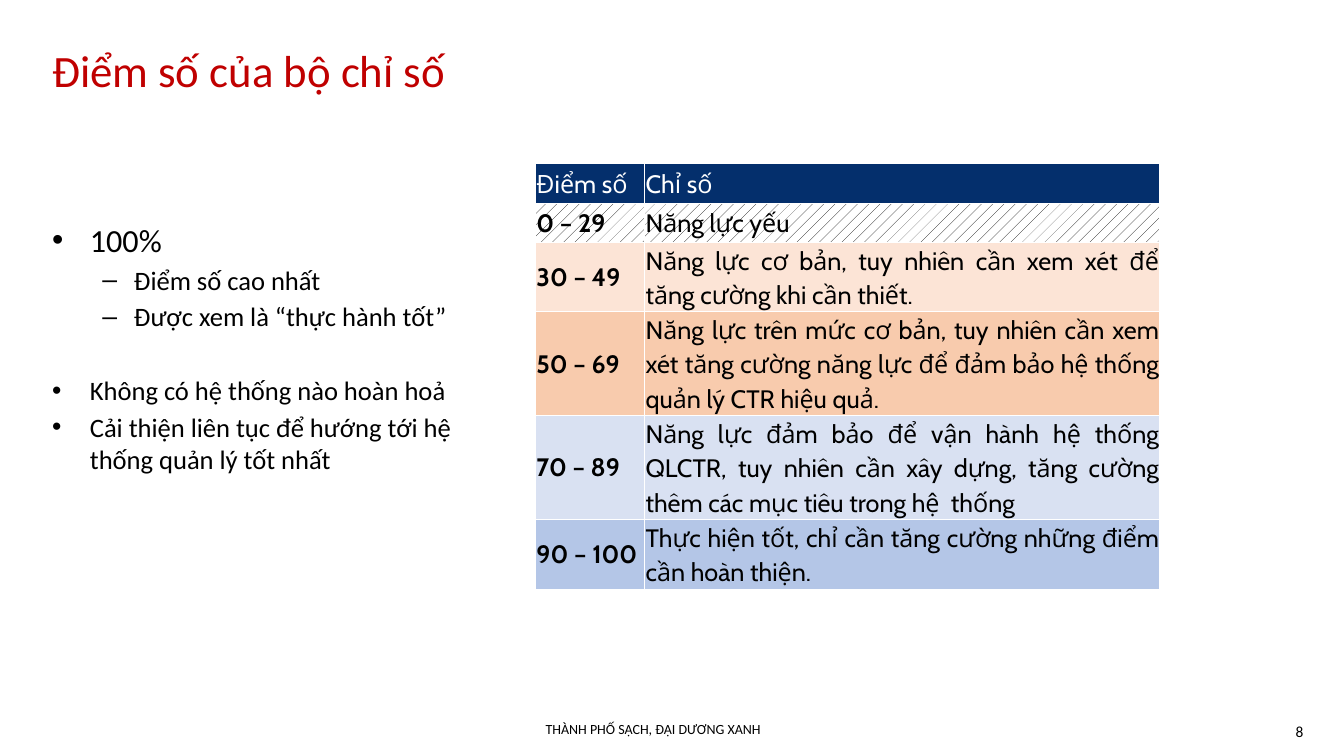
"""Build the slide on index scores: title, bullet list, score table and footer."""
from itertools import groupby

from lxml import etree
from pptx import Presentation
from pptx.dml.color import RGBColor
from pptx.enum import dml, text
from pptx.oxml import ns
from pptx.util import Pt

C = {"black": "000000", "white": "FFFFFF", "red": "C00000", "navy": "042F6C",
     "peach": "FCE4D6", "orange": "F8CBAD", "pale": "D9E1F2", "blue": "B4C6E7"}
AL, ANC = text.PP_ALIGN, text.MSO_ANCHOR

BULLETS = [
    ("100%", 0, 23, 0),
    ("Điểm số cao nhất", 1, 19, 3.5),
    ("Được xem là “thực hành tốt”", 1, 19, 3.5),
    ("Không có hệ thống nào hoàn hoả", 0, 19, 30),
    ("Cải thiện liên tục để hướng tới hệ thống quản lý tốt nhất", 0, 19, 3.5),
]
LEVELS = [{"char": "•", "left": 27, "hang": 27},
          {"char": "–", "left": 58.5, "hang": 22.5}]
SCORES = [
    ("Điểm số", "Chỉ số", "navy", 28),
    ("0 – 29", "Năng lực yếu", None, 28),
    ("30 – 49", "Năng lực cơ bản, tuy nhiên cần xem xét để tăng cường khi "
     "cần thiết.", "peach", 41),
    ("50 – 69", "Năng lực trên mức cơ bản, tuy nhiên cần xem xét tăng cường "
     "năng lực để đảm bảo hệ thống quản lý CTR hiệu quả.", "orange", 62),
    ("70 – 89", "Năng lực đảm bảo để vận hành hệ thống QLCTR, tuy nhiên cần "
     "xây dựng, tăng cường thêm các mục tiêu trong hệ  thống", "pale", 62),
    ("90 – 100", "Thực hiện tốt, chỉ cần tăng cường những điểm cần hoàn "
     "thiện.", "blue", 41),
]


def rgb(name):
    return RGBColor.from_string(C[name])


def apply(obj, fmt):
    for key, value in fmt.items():
        setattr(obj, key, value)


def place(sp, x, y, w, h):
    apply(sp, {"left": Pt(x), "top": Pt(y), "width": Pt(w), "height": Pt(h)})


def add_run(p, words, size, color="black", name="Calibri", bold=False):
    r = p.add_run()
    r.text = words
    apply(r.font, {"size": Pt(size), "name": name, "bold": bold})
    r.font.color.rgb = rgb(color)


def add_title(s, words):
    sp = s.shapes.title
    place(sp, 30, 13.5, 650, 73)
    apply(sp.text_frame, {"vertical_anchor": ANC.MIDDLE, "word_wrap": True,
                          "auto_size": text.MSO_AUTO_SIZE.NONE})
    p = sp.text_frame.paragraphs[0]
    p.alignment = AL.LEFT
    add_run(p, words, 32, "red")


def set_bullet(p, char, left, hang):
    pPr = p._p.get_or_add_pPr()
    pPr.set("marL", str(Pt(left)))
    pPr.set("indent", str(-Pt(hang)))
    etree.SubElement(pPr, ns.qn("a:buFont")).set("typeface", "Arial")
    etree.SubElement(pPr, ns.qn("a:buChar")).set("char", char)


def add_list(s, items):
    sp = s.placeholders[1]
    place(sp, 30, 153.5, 302, 314)
    tf = sp.text_frame
    apply(tf, {"vertical_anchor": ANC.TOP, "word_wrap": True,
               "auto_size": text.MSO_AUTO_SIZE.NONE})
    for i, (words, level, size, before) in enumerate(items):
        p = tf.add_paragraph() if i else tf.paragraphs[0]
        set_bullet(p, **LEVELS[level])
        apply(p, {"level": level, "alignment": AL.LEFT,
                  "space_before": Pt(before)})
        add_run(p, words, size)


def add_label(s, words, size, align, x, y, w, h):
    tf = s.shapes.add_textbox(Pt(x), Pt(y), Pt(w), Pt(h)).text_frame
    tf.word_wrap = True
    p = tf.paragraphs[0]
    p.alignment = align
    add_run(p, words, size)


def is_vietnamese(char):
    return 0x100 <= ord(char) < 0x2000


def set_borders(cell):
    tcPr = cell._tc.get_or_add_tcPr()
    for side in ("lnL", "lnR", "lnT", "lnB"):
        ln = etree.SubElement(tcPr, ns.qn(f"a:{side}"), w=str(Pt(0.75)))
        fill = etree.SubElement(ln, ns.qn("a:solidFill"))
        etree.SubElement(fill, ns.qn("a:srgbClr"), val=C["white"])


def set_fill(cell, color):
    if color:
        cell.fill.solid()
        cell.fill.fore_color.rgb = rgb(color)
        return
    cell.fill.patterned()
    cell.fill.pattern = dml.MSO_PATTERN.PERCENT_10
    cell.fill.fore_color.rgb = rgb("black")
    cell.fill.back_color.rgb = rgb("white")


def fill_cell(cell, words, fill, color, bold, align):
    set_borders(cell)
    set_fill(cell, fill)
    apply(cell, {"vertical_anchor": ANC.MIDDLE, "margin_left": Pt(0.7),
                 "margin_right": Pt(0.7), "margin_top": Pt(0.7),
                 "margin_bottom": 0})
    p = cell.text_frame.paragraphs[0]
    p.alignment = align
    for accented, chars in groupby(words, is_vietnamese):
        name = "Open Sans" if accented else "Cabin"
        add_run(p, "".join(chars), 18, color, name, bold)


def add_scores(s, rows):
    height = sum(row[-1] for row in rows)
    table = s.shapes.add_table(len(rows), 2, Pt(382.5), Pt(117), Pt(446),
                               Pt(height)).table
    for col, width in zip(table.columns, (78, 368)):
        col.width = Pt(width)
    for i, (score, meaning, fill, h) in enumerate(rows):
        table.rows[i].height = Pt(h)
        color = "black" if i else "white"
        fill_cell(table.cell(i, 0), score, fill, color, i > 0,
                  AL.JUSTIFY if i else AL.LEFT)
        fill_cell(table.cell(i, 1), meaning, fill, color, False, AL.JUSTIFY)


def main():
    prs = Presentation()
    apply(prs, {"slide_width": Pt(960), "slide_height": Pt(540)})
    s = prs.slides.add_slide(prs.slide_layouts[1])
    add_title(s, "Điểm số của bộ chỉ số")
    add_list(s, BULLETS)
    add_scores(s, SCORES)
    add_label(s, "8", 11, AL.RIGHT, 770, 512, 168, 21)
    add_label(s, "THÀNH PHỐ SẠCH, ĐẠI DƯƠNG XANH", 10, AL.CENTER,
              120, 511, 693, 20)
    prs.save("out.pptx")


if __name__ == "__main__":
    main()
